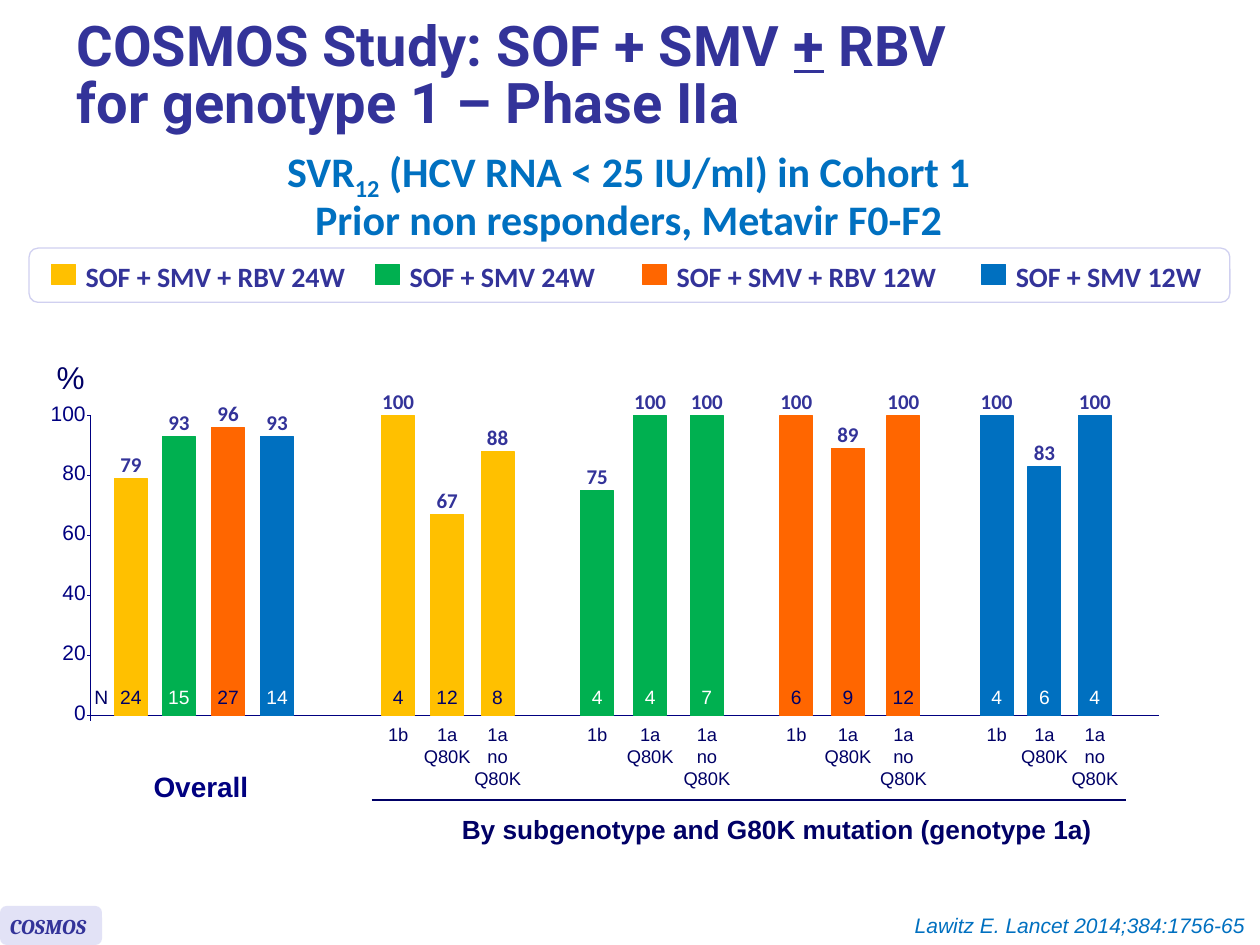
import pptx
import pptx.dml.color
import pptx.enum.shapes
import pptx.enum.text
import pptx.oxml.ns
import pptx.util
from lxml import etree

Pt = pptx.util.Pt
ALIGN = pptx.enum.text.PP_ALIGN
ANCHOR = pptx.enum.text.MSO_ANCHOR
SHAPE = pptx.enum.shapes.MSO_SHAPE

COLORS = {
    "yellow": "FFC000", "green": "00B050", "orange": "FF6600", "blue": "0070C0",
    "indigo": "333399", "navy": "000080", "ink": "000066", "white": "FFFFFF",
    "badge": "E2E2F6", "frame": "D0D0F0",
}

# Plot geometry, in points
AXIS_X, AXIS_RIGHT = 51.8, 662.4
PLOT_TOP, PLOT_BOTTOM = 237.6, 409
BAR_WIDTH = 18.7
GENOTYPES = (["1b"], ["1a", "Q80K"], ["1a", "no", "Q80K"])

# Bars: (left, SVR12 in %, number of patients)
OVERALL = [("yellow", 65.5, 79, 24), ("green", 92.9, 93, 15),
           ("orange", 121, 96, 27), ("blue", 149, 93, 14)]
SUBGROUPS = {
    "yellow": [(218.2, 100, 4), (246.2, 67, 12), (275, 88, 8)],
    "green": [(331.9, 75, 4), (362.2, 100, 4), (394.6, 100, 7)],
    "orange": [(445.7, 100, 6), (475.2, 89, 9), (506.9, 100, 12)],
    "blue": [(560.2, 100, 4), (587.5, 83, 6), (616.3, 100, 4)],
}
# Legend: (color, swatch left, label width, label)
LEGEND = [("yellow", 29.5, 165, "SOF + SMV + RBV 24W"),
          ("green", 214.6, 122.4, "SOF + SMV 24W"),
          ("orange", 367.2, 165, "SOF + SMV + RBV 12W"),
          ("blue", 561, 122.4, "SOF + SMV 12W")]


def rgb(color):
    return pptx.dml.color.RGBColor.from_string(COLORS[color])


def add_text(slide, box, lines, size, color, font="Arial", bold=False, italic=False,
             align=ALIGN.LEFT, anchor=ANCHOR.TOP, inset=True, wrap=False, spacing=None):
    """Add one paragraph per line and return the paragraphs."""
    frame = slide.shapes.add_textbox(*map(Pt, box)).text_frame
    frame.word_wrap = wrap
    frame.vertical_anchor = anchor
    if not inset:
        frame.margin_left = frame.margin_right = frame.margin_top = frame.margin_bottom = 0
    for index, line in enumerate(lines):
        paragraph = frame.add_paragraph() if index else frame.paragraphs[0]
        paragraph.alignment = align
        if spacing:
            paragraph.line_spacing = spacing
        paragraph.font.size = Pt(size)
        paragraph.font.name = font
        paragraph.font.bold = bold
        paragraph.font.italic = italic
        paragraph.font.color.rgb = rgb(color)
        for part in [line] if isinstance(line, str) else line:
            paragraph.add_run().text = part
    return frame.paragraphs


def add_block(slide, box, fill, line=None, kind=SHAPE.RECTANGLE):
    block = slide.shapes.add_shape(kind, *map(Pt, box))
    block.shadow.inherit = False
    block.fill.solid()
    block.fill.fore_color.rgb = rgb(fill)
    if line:
        block.line.color.rgb = rgb(line)
        block.line.width = Pt(0.75)
    else:
        block.line.fill.background()


def add_rule(slide, x1, y1, x2, y2, color="navy"):
    rule = slide.shapes.add_connector(
        pptx.enum.shapes.MSO_CONNECTOR.STRAIGHT, Pt(x1), Pt(y1), Pt(x2), Pt(y2))
    rule.line.color.rgb = rgb(color)
    rule.line.width = Pt(0.75)
    etree.SubElement(rule._element.spPr, pptx.oxml.ns.qn("a:effectLst"))


def value_y(percent):
    return PLOT_BOTTOM - (PLOT_BOTTOM - PLOT_TOP) * percent / 100


def add_bar(slide, color, left, percent, patients):
    top = value_y(percent)
    center = left + BAR_WIDTH / 2
    add_block(slide, (left, top, BAR_WIDTH, PLOT_BOTTOM - top), color, color)
    add_text(slide, (center - 10, top - 15.5, 20, 14.4), [str(percent)], 12, "indigo",
             font="Calibri", bold=True, align=ALIGN.CENTER, inset=False)
    add_text(slide, (center - 15, 388.1, 30, 20.9), [str(patients)], 11,
             "white" if color in ("green", "blue") else "ink", align=ALIGN.CENTER)


def add_axes(slide):
    add_rule(slide, AXIS_X, PLOT_TOP, AXIS_X, PLOT_BOTTOM + 2.9)
    add_rule(slide, AXIS_X, PLOT_BOTTOM, AXIS_RIGHT, PLOT_BOTTOM)
    for percent in range(0, 101, 20):
        y = value_y(percent)
        add_rule(slide, AXIS_X - 2.2, y, AXIS_X, y)
        add_text(slide, (27, y - 9, 22, 14.4), [str(percent)], 12, "navy",
                 align=ALIGN.RIGHT, inset=False)
    add_text(slide, (25.2, 200.9, 32, 20.9), ["%"], 18, "ink")
    add_text(slide, (46.8, 388.1, 24, 20.9), ["N"], 11, "ink")


def add_headings(slide):
    title, = add_text(slide, (36.7, 5.8, 657.4, 77), [["COSMOS Study: SOF + SMV ", "+", " RBV "]],
                      32, "indigo", font="Roboto", bold=True, anchor=ANCHOR.MIDDLE,
                      wrap=True, spacing=0.85)
    title.runs[1].font.underline = True
    title.add_line_break()
    title.add_run().text = "for genotype 1 – Phase IIa"

    endpoint, _ = add_text(
        slide, (151.9, 88.6, 414.7, 55.4),
        [["SVR", "12", " (HCV RNA < 25 IU/ml) in Cohort 1"],
         "Prior non responders, Metavir F0-F2"],
        24, "blue", font="Calibri", bold=True, align=ALIGN.CENTER, spacing=Pt(23.6))
    endpoint.runs[1]._r.get_or_add_rPr().set("baseline", "-25000")


def add_legend(slide):
    add_block(slide, (16.6, 141.8, 686.2, 31), "white", "frame", SHAPE.ROUNDED_RECTANGLE)
    for color, left, width, label in LEGEND:
        add_block(slide, (left, 151.2, 13.7, 11.5), color, color)
        add_text(slide, (left + 12.4, 144.7, width, 26.6), [label], 16, "indigo",
                 font="Calibri", bold=True)


def add_footer(slide):
    add_block(slide, (0, 517.7, 58.3, 22.3), "badge", kind=SHAPE.ROUNDED_RECTANGLE)
    add_text(slide, (-1.4, 518.4, 63.4, 21.6), ["COSMOS"], 12, "indigo",
             font="Cambria", bold=True, italic=True, wrap=True)
    add_text(slide, (481, 517.7, 237.6, 21.6), ["Lawitz E. Lancet 2014;384:1756-65"],
             12, "blue", italic=True, align=ALIGN.RIGHT, wrap=True)


def main():
    deck = pptx.Presentation()
    deck.slide_width, deck.slide_height = Pt(720), Pt(540)
    slide = deck.slides.add_slide(deck.slide_layouts[6])

    add_headings(slide)
    add_legend(slide)
    add_axes(slide)

    # Overall response
    for bar in OVERALL:
        add_bar(slide, *bar)
    add_text(slide, (87.8, 439.9, 54.7, 19.4), ["Overall"], 16, "navy", bold=True, inset=False)

    # Response by subgenotype and mutation
    for color, bars in SUBGROUPS.items():
        for (left, percent, patients), genotype in zip(bars, GENOTYPES):
            add_bar(slide, color, left, percent, patients)
            add_text(slide, (left + BAR_WIDTH / 2 - 21.5, 409.7, 43, 8 + 12.6 * len(genotype)),
                     genotype, 10.5, "ink", align=ALIGN.CENTER)
    add_rule(slide, 212.4, 457.2, 643.7, 457.2, "ink")
    add_text(slide, (254.9, 463, 378, 23.8), ["By subgenotype and G80K mutation (genotype 1a)"],
             15, "ink", bold=True, align=ALIGN.CENTER, spacing=0.9)

    add_footer(slide)
    deck.save("out.pptx")


if __name__ == "__main__":
    main()
